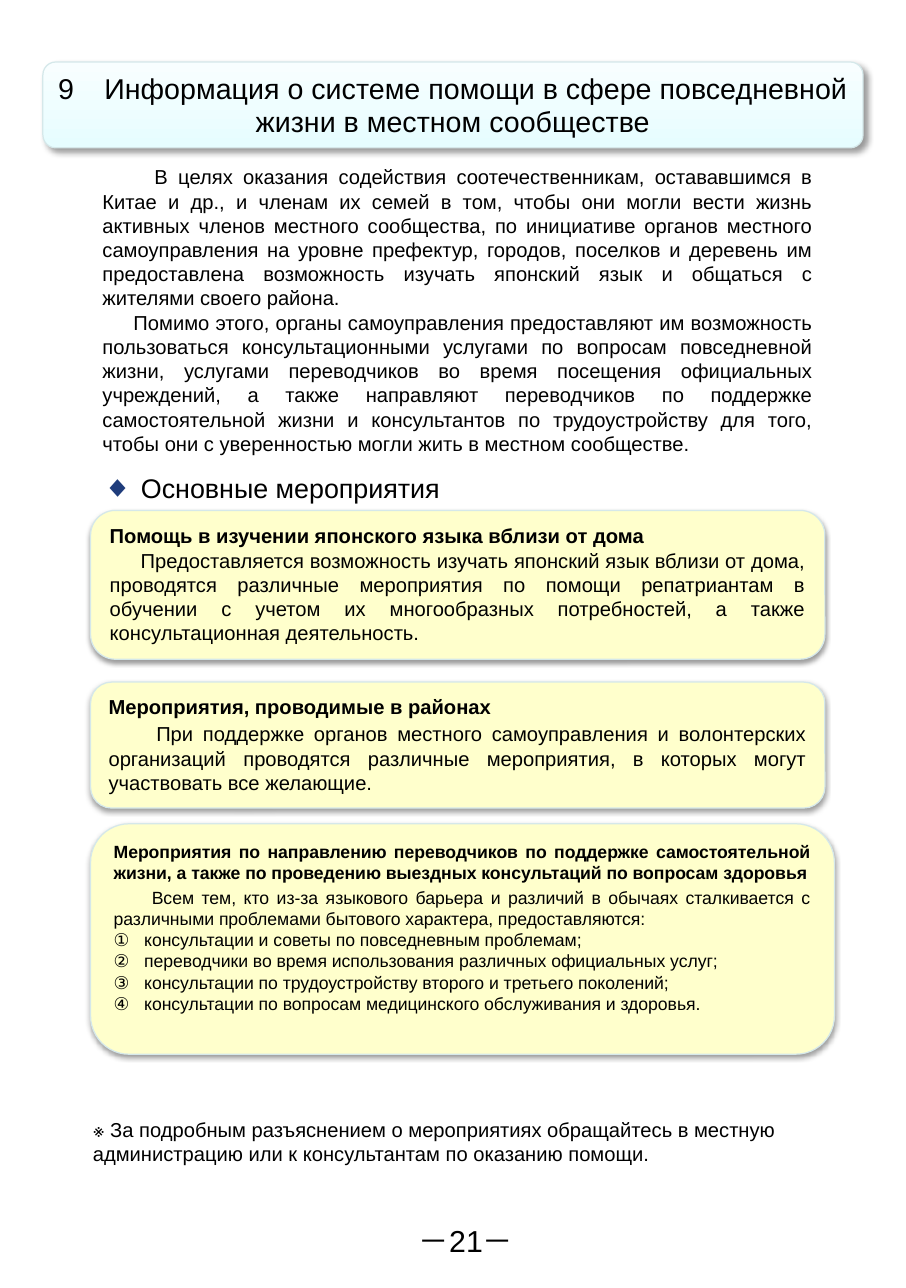
import pptx
import pptx.util
import pptx.dml.color
import pptx.enum.shapes
import pptx.enum.text
import pptx.oxml
import pptx.oxml.ns

Cm, Pt = pptx.util.Cm, pptx.util.Pt
RGBColor = pptx.dml.color.RGBColor
ALIGN = pptx.enum.text.PP_ALIGN
ANCHOR = pptx.enum.text.MSO_ANCHOR

BLACK = RGBColor(0x00, 0x00, 0x00)
NAVY = RGBColor(0x1F, 0x3C, 0x7B)
CREAM = RGBColor(0xFF, 0xFF, 0xCC)
EDGE = RGBColor(0xD5, 0xE8, 0xEA)
AQUA = RGBColor(0xE6, 0xFD, 0xFF)
MIST = RGBColor(0xF8, 0xFE, 0xFF)

INTRO = [
    ("В целях оказания содействия соотечественникам, остававшимся в Китае и др., "
     "и членам их семей в том, чтобы они могли вести жизнь активных членов местного "
     "сообщества, по инициативе органов местного самоуправления на уровне префектур, "
     "городов, поселков и деревень им предоставлена возможность изучать японский язык "
     "и общаться с жителями своего района.", 1.09),
    ("Помимо этого, органы самоуправления предоставляют им возможность пользоваться "
     "консультационными услугами по вопросам повседневной жизни, услугами переводчиков "
     "во время посещения официальных учреждений, а также направляют переводчиков по "
     "поддержке самостоятельной жизни и консультантов по трудоустройству для того, "
     "чтобы они с уверенностью могли жить в местном сообществе.", 0.65),
]

# Each card: box in cm, heading, gap after heading, body, first-line indent, size, list
CARDS = [
    ((1.9, 10.7, 15.4, 3.12), "Помощь в изучении японского языка вблизи от дома", 0,
     "Предоставляется возможность изучать японский язык вблизи от дома, проводятся "
     "различные мероприятия по помощи репатриантам в обучении с учетом их многообразных "
     "потребностей, а также консультационная деятельность.", 0.65, 12, []),
    ((1.9, 14.3, 15.4, 2.64), "Мероприятия, проводимые в районах", 2,
     "При поддержке органов местного самоуправления и волонтерских организаций проводятся "
     "различные мероприятия, в которых могут участвовать все желающие.", 1.0, 12, []),
    ((1.9, 17.27, 15.6, 4.83),
     "Мероприятия по направлению переводчиков по поддержке самостоятельной жизни, "
     "а также по проведению выездных консультаций по вопросам здоровья", 2,
     "Всем тем, кто из-за языкового барьера и различий в обычаях сталкивается с "
     "различными проблемами бытового характера, предоставляются:", 0.8, 10.5,
     ["консультации и советы по повседневным проблемам;",
      "переводчики во время использования различных официальных услуг;",
      "консультации по трудоустройству второго и третьего поколений;",
      "консультации по вопросам медицинского обслуживания и здоровья."]),
]


def node(tag, inner="", **attrs):
    text = "".join(f' {key}="{val}"' for key, val in attrs.items())
    return pptx.oxml.parse_xml(
        f'<a:{tag} {pptx.oxml.ns.nsdecls("a")}{text}>{inner}</a:{tag}>')


def write(frame, text, size=12, bold=False, color=BLACK, align=ALIGN.LEFT,
          left=0, first=0, after=0, lead=None, number=None, join=False):
    """Add a paragraph, or with join a run in the last one; number is (kind, start)."""
    para = frame.paragraphs[-1]
    if para.runs and not join:
        para = frame.add_paragraph()
    if not join:
        para.alignment = align
        para.space_after = Pt(after)
        if lead:
            para.line_spacing = Pt(lead)
        props = para._p.get_or_add_pPr()
        props.set("marL", str(Cm(left)))
        props.set("indent", str(Cm(first)))
        if number:
            props.append(node("buAutoNum", type=number[0], startAt=number[1]))
    run = para.add_run()
    run.text = text
    font = run.font
    font.name, font.size, font.bold = "Arial", Pt(size), bold
    font.color.rgb = color


def label(slide, box, anchor=ANCHOR.TOP):
    frame = slide.shapes.add_textbox(*map(Cm, box)).text_frame
    frame.word_wrap = True
    frame.vertical_anchor = anchor
    return frame


def panel(slide, box, shade, anchor):
    """Add a rounded box; shade is blur, distance (points), angle and opacity."""
    shape = slide.shapes.add_shape(
        pptx.enum.shapes.MSO_SHAPE.ROUNDED_RECTANGLE, *map(Cm, box))
    shape.line.color.rgb = EDGE
    shape.line.width = Pt(0.75)
    shape.fill.solid()
    shape.fill.fore_color.rgb = CREAM
    shape.shadow.inherit = False
    blur, dist, angle, alpha = shade
    cast = node("outerShdw",
                f'<a:srgbClr val="{BLACK}"><a:alpha val="{alpha * 1000}"/></a:srgbClr>',
                blurRad=Pt(blur), dist=Pt(dist), dir=angle * 60000, rotWithShape=0)
    shape._element.spPr.find(pptx.oxml.ns.qn("a:effectLst")).append(cast)
    shape.text_frame.word_wrap = True
    shape.text_frame.vertical_anchor = anchor
    return shape


def title(slide, box):
    shape = panel(slide, box, (4, 3, 45, 40), ANCHOR.MIDDLE)
    shape.adjustments[0] = 0.15
    shape.fill.gradient()
    shape.fill.gradient_angle = 90
    for stop, color in zip(shape.fill.gradient_stops, (AQUA, MIST)):
        stop.color.rgb = color
    frame = shape.text_frame
    frame.word_wrap = False
    write(frame, "Информация о системе помощи в сфере повседневной", size=17, lead=20,
          align=ALIGN.CENTER, left=0.97, first=-0.97, number=("arabicPlain", 9))
    write(frame, "жизни в местном сообществе", size=17, lead=20, align=ALIGN.CENTER)


def intro(slide, box):
    frame = label(slide, box, ANCHOR.MIDDLE)
    for text, first in INTRO:
        write(frame, text, align=ALIGN.JUSTIFY, first=first)


def heading(slide, box):
    frame = label(slide, box)
    write(frame, "◆ ", size=18, color=NAVY)
    write(frame, "Основные мероприятия", size=16, join=True)


def card(slide, box, head, gap, body, first, size, items):
    frame = panel(slide, box, (3.1, 1.6, 90, 38), ANCHOR.TOP).text_frame
    write(frame, head, size=size, bold=True, align=ALIGN.JUSTIFY, after=gap)
    write(frame, body, size=size, align=ALIGN.JUSTIFY, first=first)
    for item in items:
        write(frame, item, size=size, align=ALIGN.JUSTIFY, left=0.64, first=-0.64,
              number=("circleNumDbPlain", 1))


def note(slide, box):
    write(label(slide, box), "※ За подробным разъяснением о мероприятиях обращайтесь "
          "в местную администрацию или к консультантам по оказанию помощи.")


def folio(slide, box):
    write(label(slide, box), "－21－", size=18, align=ALIGN.CENTER)


def main():
    deck = pptx.Presentation()
    deck.slide_width, deck.slide_height = Cm(19), Cm(27)
    slide = deck.slides.add_slide(deck.slide_layouts[6])
    title(slide, (0.9, 1.3, 17.2, 1.8))
    intro(slide, (1.9, 3.3, 15.4, 6.4))
    heading(slide, (1.9, 9.7, 13.8, 1))
    for parts in CARDS:
        card(slide, *parts)
    note(slide, (1.7, 23.3, 15.8, 1.27))
    folio(slide, (8.1, 25.5, 3.35, 1))
    deck.save("out.pptx")


if __name__ == "__main__":
    main()
